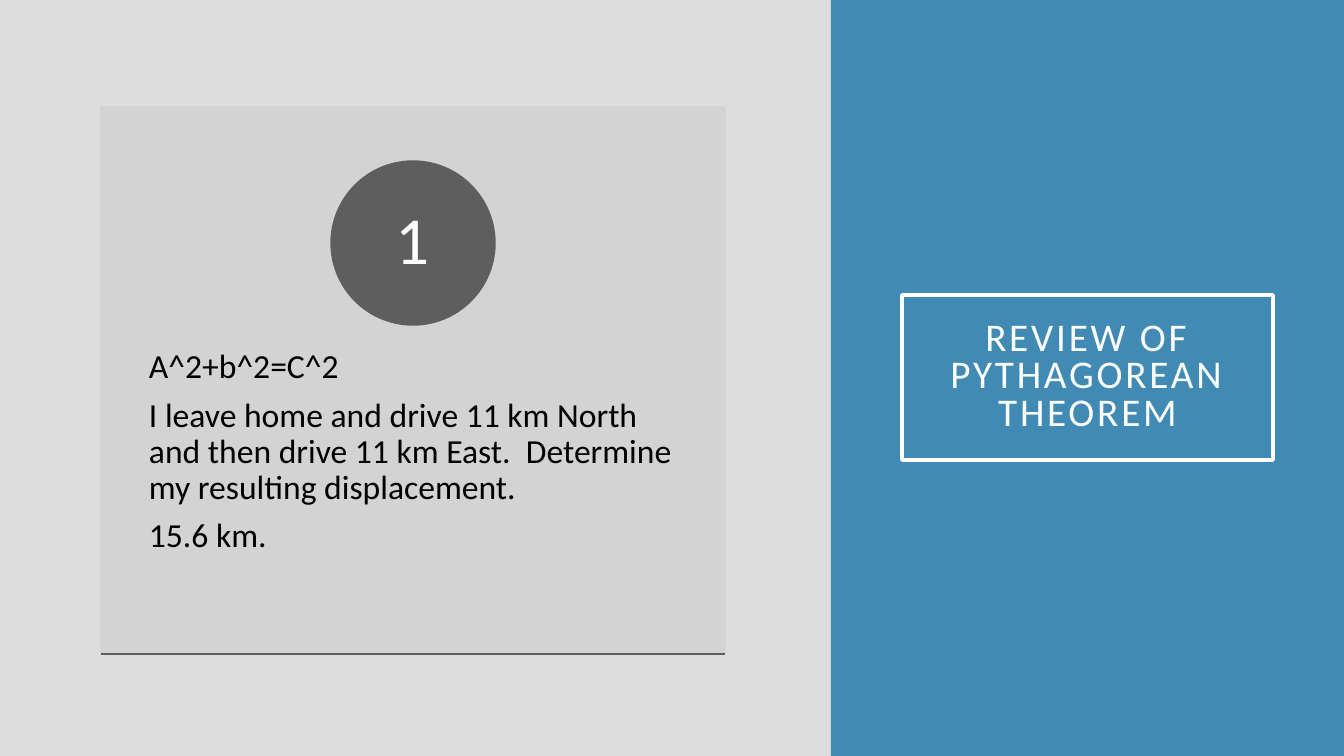
from lxml import etree
from pptx import Presentation
from pptx.dml.color import RGBColor
from pptx.enum.shapes import MSO_CONNECTOR, MSO_SHAPE
from pptx.enum.text import MSO_ANCHOR, MSO_AUTO_SIZE, PP_ALIGN
from pptx.oxml.ns import qn
from pptx.util import Pt

RECT, OVAL = MSO_SHAPE.RECTANGLE, MSO_SHAPE.OVAL
STRAIGHT = MSO_CONNECTOR.STRAIGHT
TOP, MIDDLE = MSO_ANCHOR.TOP, MSO_ANCHOR.MIDDLE
LEFT, CENTER = PP_ALIGN.LEFT, PP_ALIGN.CENTER
NO_FIT = MSO_AUTO_SIZE.NONE

FONT = "Calibri"
WHITE, BLACK, DARK = "FFFFFF", "000000", "5E5E5E"
BACKGROUND, PANEL, BLUE = "DDDDDD", "D2D2D2", "418AB3"
SLIDE_W, SLIDE_H = 1344, 756
CARD_X, CARD_Y, CARD_W, CARD_H = 101, 107, 624, 547

PROBLEM = [
    "A^2+b^2=C^2",
    "I leave home and drive 11 km North and then drive 11 km East.  "
    "Determine my resulting displacement.",
    "15.6 km.",
]


def px(n):
    return round(n * 914400 / 100.8)


def rgb(color):
    return RGBColor.from_string(color)


def set_alpha(shape, percent):
    for clr in shape._element.spPr.iter(qn("a:srgbClr")):
        etree.SubElement(clr, qn("a:alpha")).set("val", str(percent * 1000))


def add_block(s, kind, x, y, w, h, fill, outlined=True):
    sp = s.shapes.add_shape(kind, px(x), px(y), px(w), px(h))
    sp.shadow.inherit = False
    sp.fill.solid()
    sp.fill.fore_color.rgb = rgb(fill)
    if outlined:
        sp.line.color.rgb = rgb(fill)
        sp.line.width = Pt(1)
    else:
        sp.line.fill.background()
    return sp


def add_rule(s, x, y, w, color):
    line = s.shapes.add_connector(STRAIGHT, px(x), px(y), px(x + w), px(y))
    line.line.color.rgb = rgb(color)
    line.line.width = Pt(1)
    etree.SubElement(line._element.spPr, qn("a:effectLst"))


def write(sp, paragraphs, size, color, inset, anchor=TOP, align=LEFT,
          leading=0.9, after=0, tracking=0):
    tf = sp.text_frame
    tf.word_wrap = True
    tf.auto_size = NO_FIT
    tf.vertical_anchor = anchor
    tf.margin_left = tf.margin_right = px(inset[0])
    tf.margin_top = tf.margin_bottom = px(inset[1])
    for i, text in enumerate(paragraphs):
        p = tf.add_paragraph() if i else tf.paragraphs[0]
        p.alignment = align
        p.line_spacing = leading
        p.space_after = Pt(after)
        r = p.add_run()
        r.text = text
        r.font.name = FONT
        r.font.size = Pt(size)
        r.font.color.rgb = rgb(color)
        if tracking:
            r._r.get_or_add_rPr().set("spc", str(tracking * 100))


def add_text(s, x, y, w, h, *args, **kwargs):
    sp = s.shapes.add_textbox(px(x), px(y), px(w), px(h))
    write(sp, *args, **kwargs)


def format_title(s, x, y, w, h, text):
    sp = s.shapes.title
    sp.left, sp.top, sp.width, sp.height = px(x), px(y), px(w), px(h)
    sp.line.color.rgb = rgb(WHITE)
    sp.line.width = Pt(2.5)
    write(sp, [text], 28, WHITE, (20, 20), MIDDLE, CENTER,
          leading=0.8, tracking=2)
    # Bring the title in front of the side panel
    s.shapes._spTree.append(sp._element)


def main():
    prs = Presentation()
    prs.slide_width, prs.slide_height = px(SLIDE_W), px(SLIDE_H)
    s = prs.slides.add_slide(prs.slide_layouts[5])
    s.background.fill.solid()
    s.background.fill.fore_color.rgb = rgb(BACKGROUND)

    # Side panel with title
    add_block(s, RECT, 831, 0, SLIDE_W - 831, SLIDE_H, BLUE, outlined=False)
    format_title(s, 902, 295, 371, 165, "REVIEW OF PYTHAGOREAN THEOREM")

    # Problem card
    card = add_block(s, RECT, CARD_X, CARD_Y, CARD_W, CARD_H, PANEL)
    set_alpha(card, 90)
    add_text(s, CARD_X, 314, CARD_W, 329, PROBLEM, 24, BLACK, (48, 36),
             after=8.4)

    # Number badge, centred on the card
    center = CARD_X + CARD_W // 2
    add_block(s, OVAL, center - 82, 161, 164, 164, DARK)
    add_text(s, center - 58, 185, 116, 116, ["1"], 48, WHITE, (13, 1),
             MIDDLE, CENTER)

    # Bottom rule
    add_rule(s, CARD_X, CARD_Y + CARD_H, CARD_W, DARK)

    prs.save("out.pptx")


if __name__ == "__main__":
    main()
